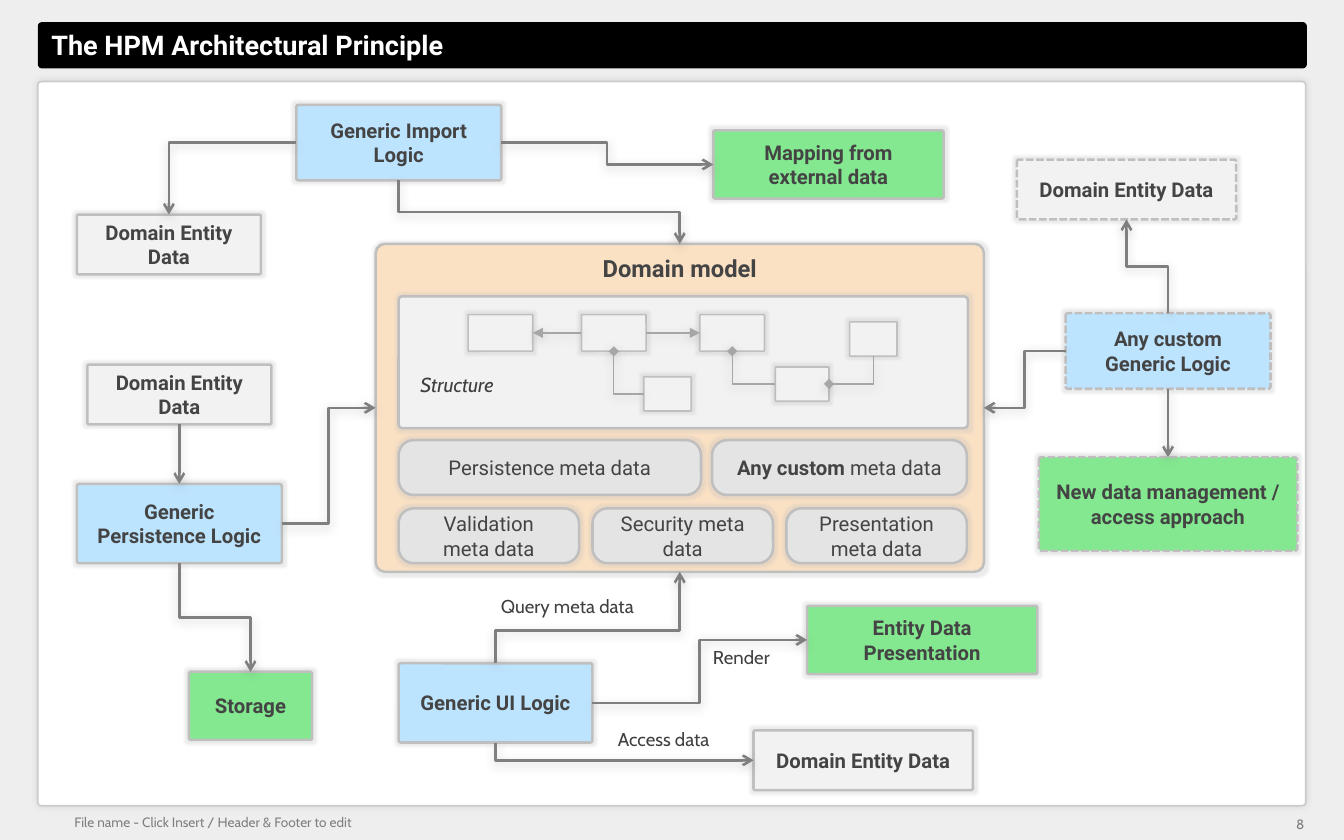
import pptx
import pptx.util
import pptx.dml.color
import pptx.enum.dml
import pptx.enum.shapes
import pptx.enum.text
import pptx.oxml.ns
from lxml import etree

Pt = pptx.util.Pt
qn = pptx.oxml.ns.qn
ALIGN = pptx.enum.text.PP_ALIGN
ANCHOR = pptx.enum.text.MSO_ANCHOR
CONNECTOR = pptx.enum.shapes.MSO_CONNECTOR
TOP, LEFT, BOTTOM, RIGHT = range(4)
LOGIC, RESULT, DATA, META = "BDE4FF", "84E890", "F2F2F2", "E4E4E4"


def rgb(value):
    return pptx.dml.color.RGBColor.from_string(value)


def add_effect(sp, kind, color, alpha, **attrs):
    props = sp._element.spPr
    effects = props.find(qn("a:effectLst"))
    if effects is None:
        effects = etree.SubElement(props, qn("a:effectLst"))
    effect = etree.SubElement(effects, qn("a:" + kind))
    for name, value in attrs.items():
        effect.set(name, str(value))
    clr = etree.SubElement(effect, qn("a:srgbClr"), val=color)
    etree.SubElement(clr, qn("a:alpha"), val=str(alpha * 1000))


def format_runs(p, size, color, font, bold=False, italic=False):
    for r in p.runs:
        r.font.size = Pt(size)
        r.font.name = font
        r.font.color.rgb = rgb(color)
        r.font.bold = bold
        r.font.italic = italic


def set_frame(tf, anchor, side, end):
    tf.word_wrap = True
    tf.vertical_anchor = anchor
    tf.margin_left = tf.margin_right = Pt(side)
    tf.margin_top = tf.margin_bottom = Pt(end)


def add_panel(s, box, fill, rounding, line=None, width=1.5):
    kind = pptx.enum.shapes.MSO_SHAPE.ROUNDED_RECTANGLE
    sp = s.shapes.add_shape(kind, *map(Pt, box))
    sp.adjustments[0] = rounding
    sp.fill.solid()
    sp.fill.fore_color.rgb = rgb(fill)
    sp.shadow.inherit = False
    if line:
        sp.line.color.rgb = rgb(line)
        sp.line.width = Pt(width)
    else:
        sp.line.fill.background()
    return sp


def add_box(s, text, box, fill, rounding=0.029, width=1.5, size=12,
            bold=True, anchor=ANCHOR.MIDDLE, dashed=False):
    sp = add_panel(s, box, fill, rounding, "BFBFBF", width)
    if dashed:
        sp.line.dash_style = pptx.enum.dml.MSO_LINE.SQUARE_DOT
    add_effect(sp, "glow", "BFBFBF", 30, rad=Pt(3))
    if text:
        set_frame(sp.text_frame, anchor, 9.4, 4.3)
        p = sp.text_frame.paragraphs[0]
        p.text = text
        p.alignment = ALIGN.CENTER
        format_runs(p, size, "444444", "Roboto", bold)
    return sp


def add_label(s, text, box, size=11, color="404040", italic=False,
              align=ALIGN.LEFT, anchor=ANCHOR.TOP, margins=(7.2, 3.6)):
    tf = s.shapes.add_textbox(*map(Pt, box)).text_frame
    set_frame(tf, anchor, *margins)
    p = tf.paragraphs[0]
    p.text = text
    p.alignment = align
    format_runs(p, size, color, "Cabin", italic=italic)


def add_link(s, start, start_side, end, end_side, straight=False,
             color="7F7F7F", width=1.5, head=None, tail="arrow", bend=None):
    kind = CONNECTOR.STRAIGHT if straight else CONNECTOR.ELBOW
    c = s.shapes.add_connector(kind, 0, 0, 0, 0)
    c.begin_connect(start, start_side)
    c.end_connect(end, end_side)
    props = c._element.spPr
    if not straight:
        if start_side % 2 != end_side % 2:
            props.find(qn("a:prstGeom")).set("prst", "bentConnector2")
        if start_side in (TOP, BOTTOM):
            turn_upright(c)
    if bend:
        guides = props.find(qn("a:prstGeom")).get_or_add_avLst()
        etree.SubElement(guides, qn("a:gd"), name="adj1", fmla=f"val {bend}")
    c.line.color.rgb = rgb(color)
    c.line.width = Pt(width)
    for tag, style in (("a:headEnd", head), ("a:tailEnd", tail)):
        if style:
            etree.SubElement(c.line._get_or_add_ln(), qn(tag), type=style)
    add_effect(c, "outerShdw", "747474", 35, blurRad=Pt(6), dist=Pt(1.8), dir=5400000)


def turn_upright(c):
    dx, dy = c.end_x - c.begin_x, c.end_y - c.begin_y
    mid_x, mid_y = c.begin_x + dx // 2, c.begin_y + dy // 2
    c.begin_x, c.end_x = mid_x - dy // 2, mid_x + dy // 2
    c.begin_y, c.end_y = mid_y + dx // 2, mid_y - dx // 2
    c._element.spPr.find(qn("a:xfrm")).set("rot", "5400000")


def add_frame(s):
    s.background.fill.solid()
    s.background.fill.fore_color.rgb = rgb("EEEEEE")
    add_panel(s, (22.3, 13, 749.5, 27.4), "000000", 0.09)
    page = add_panel(s, (22.3, 48.2, 748.8, 427.7), "FFFFFF", 0.005, "CCCCCC", 1)
    add_effect(page, "outerShdw", "000000", 11, blurRad=Pt(4), dist=0)
    title = s.shapes.title
    title.left, title.top, title.width, title.height = map(Pt, (28.1, 13.7, 625.7, 25.2))
    title.text_frame.text = "The HPM Architectural Principle"
    set_frame(title.text_frame, ANCHOR.MIDDLE, 2.2, 2.2)
    p = title.text_frame.paragraphs[0]
    p.alignment = ALIGN.LEFT
    format_runs(p, 16, "FFFFFF", "Roboto", bold=True)
    s.shapes._spTree.append(title._element)
    add_label(s, "File name - Click Insert / Header & Footer to edit", (43.9, 481, 699, 9.4),
              8, "7F7F7F", anchor=ANCHOR.MIDDLE, margins=(0, 0))
    add_label(s, "8", (743, 479.5, 31.7, 13.7), 8, "7F7F7F",
              align=ALIGN.RIGHT, margins=(4.3, 2.2))


def add_structure(s):
    add_box(s, "", (235.4, 175, 336.2, 77.8), DATA)
    places = [(276.5, 185.8, 38.2, 21.6), (343.4, 185.8, 38.2, 21.6),
              (413.3, 185.8, 38.2, 21.6), (380.2, 222.5, 28, 20.2),
              (457.9, 216.7, 31.7, 20.2), (501.8, 190.1, 28, 20.2)]
    first, second, third, part, joint, last = [
        add_box(s, "", place, DATA, width=1) for place in places]
    thin = {"color": "A6A6A6", "width": 0.75}
    add_link(s, second, LEFT, first, RIGHT, True, tail="triangle", **thin)
    add_link(s, second, RIGHT, third, LEFT, True, tail="triangle", **thin)
    for start, start_side, end, end_side in ((second, BOTTOM, part, LEFT),
                                             (third, BOTTOM, joint, LEFT),
                                             (joint, RIGHT, last, BOTTOM)):
        add_link(s, start, start_side, end, end_side, head="diamond", tail=None, **thin)
    add_label(s, "Structure", (241.2, 216, 70.6, 21.6), 12, italic=True)


def add_model(s):
    model = add_box(s, "Domain model", (221.8, 144, 359.3, 193.7), "FBE1C4",
                    size=14, anchor=ANCHOR.TOP)
    add_structure(s)
    add_box(s, "Persistence meta data", (235.4, 259.9, 178.6, 32.4), META, 0.274, bold=False)
    custom = add_box(s, "Any custom", (420.5, 259.9, 150.5, 32.4), META, 0.274)
    p = custom.text_frame.paragraphs[0]
    p.add_run().text = " meta data"
    format_runs(p, 12, "444444", "Roboto")
    p.runs[0].font.bold = True
    for i, name in enumerate(("Validation", "Security", "Presentation")):
        add_box(s, name + " meta data", (235.4 + 114.5 * i, 300.2, 106.6, 32.4),
                META, 0.274, bold=False)
    return model


def add_import(s, model):
    logic = add_box(s, "Generic Import Logic", (175, 61.9, 121, 44.6), LOGIC)
    data = add_box(s, "Domain Entity Data", (45.4, 126.7, 108.7, 35.3), DATA)
    mapping = add_box(s, "Mapping from external data", (421.2, 77, 136.1, 40.3), RESULT)
    add_link(s, logic, LEFT, data, TOP)
    add_link(s, logic, RIGHT, mapping, LEFT)
    add_link(s, logic, BOTTOM, model, TOP)


def add_persistence(s, model):
    logic = add_box(s, "Generic Persistence Logic", (45.4, 285.8, 121, 46.8), LOGIC)
    data = add_box(s, "Domain Entity Data", (51.55, 215.3, 108.7, 35.3), DATA)
    storage = add_box(s, "Storage", (111.6, 396.7, 72.7, 40.3), RESULT)
    add_link(s, data, BOTTOM, logic, TOP, True)
    add_link(s, logic, RIGHT, model, LEFT)
    add_link(s, logic, BOTTOM, storage, TOP)


def add_custom(s, model):
    logic = add_box(s, "Any custom Generic Logic", (629.3, 185, 121, 44.6), LOGIC, dashed=True)
    data = add_box(s, "Domain Entity Data", (600.5, 94.3, 129.6, 35.3), DATA, dashed=True)
    approach = add_box(s, "New data management / access approach",
                       (613.5, 270, 152.6, 55.4), RESULT, dashed=True)
    add_link(s, logic, LEFT, model, RIGHT)
    add_link(s, logic, TOP, data, BOTTOM)
    add_link(s, logic, BOTTOM, approach, TOP, True)


def add_ui(s, model):
    logic = add_box(s, "Generic UI Logic", (235.4, 391.7, 114.5, 46.8), LOGIC)
    data = add_box(s, "Domain Entity Data", (445, 431.3, 129.6, 35.3), DATA)
    view = add_box(s, "Entity Data Presentation", (476.6, 357.8, 136.1, 40.3), RESULT)
    add_link(s, logic, TOP, model, BOTTOM, bend=36100)
    add_link(s, logic, RIGHT, view, LEFT)
    add_link(s, logic, BOTTOM, data, LEFT)
    add_label(s, "Query meta data", (288.7, 347.8, 105, 20.9))
    add_label(s, "Render", (414, 378, 52.6, 20.9))
    add_label(s, "Access data", (357.8, 426.2, 74.2, 20.9))


def main():
    prs = pptx.Presentation()
    prs.slide_width, prs.slide_height = Pt(793.7), Pt(496.06)
    s = prs.slides.add_slide(prs.slide_layouts[5])
    add_frame(s)
    model = add_model(s)
    for add_area in (add_import, add_persistence, add_custom, add_ui):
        add_area(s, model)
    prs.save("out.pptx")


if __name__ == "__main__":
    main()
